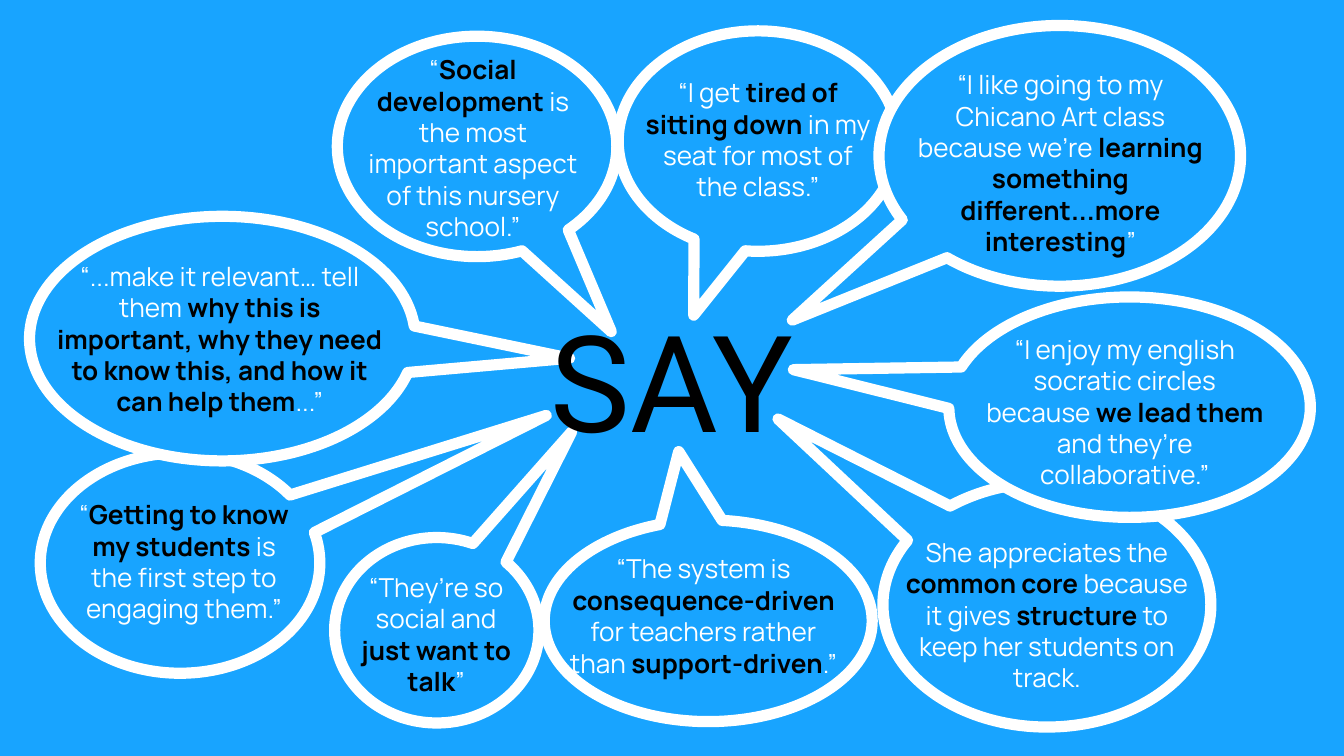
from dataclasses import dataclass

from pptx import Presentation
from pptx import util as u
from pptx.dml.color import RGBColor
from pptx.enum import shapes, text


@dataclass(frozen=True)
class Theme:
    blue: RGBColor = RGBColor(0x18, 0xA4, 0xFF)
    white: RGBColor = RGBColor(0xFF, 0xFF, 0xFF)
    black: RGBColor = RGBColor(0, 0, 0)
    head: str = "Roboto"
    body: str = "Manrope"
    big: int = 72
    small: int = 14
    edge: int = 6
    pad: float = 0.1


class Board:
    def __init__(self, slide, theme):
        self.slide = slide
        self.theme = theme
        fill = slide.background.fill
        fill.solid()
        fill.fore_color.rgb = theme.blue

    def frame(self, shape, anchor):
        frame = shape.text_frame
        frame.word_wrap = True
        frame.auto_size = text.MSO_AUTO_SIZE.NONE
        frame.vertical_anchor = anchor
        pad = u.Inches(self.theme.pad)
        frame.margin_left = frame.margin_right = pad
        frame.margin_top = frame.margin_bottom = pad
        para = frame.paragraphs[0]
        para.alignment = text.PP_ALIGN.CENTER
        return para

    def run(self, para, words, font, size, color, bold=False):
        run = para.add_run()
        run.text = words
        run.font.name = font
        run.font.size = u.Pt(size)
        run.font.bold = bold
        run.font.color.rgb = color

    def title(self, words, box):
        shape = self.slide.shapes.title
        shape.left, shape.top, shape.width, shape.height = map(u.Inches, box)
        para = self.frame(shape, text.MSO_ANCHOR.MIDDLE)
        self.run(para, words, self.theme.head, self.theme.big, self.theme.black)
        self.slide.shapes._spTree.append(shape._element)

    def bubble(self, box, tip):
        kind = shapes.MSO_SHAPE.OVAL_CALLOUT
        shape = self.slide.shapes.add_shape(kind, *map(u.Inches, box))
        shape.shadow.inherit = False
        shape.adjustments[0], shape.adjustments[1] = tip
        shape.fill.solid()
        shape.fill.fore_color.rgb = self.theme.blue
        shape.line.color.rgb = self.theme.white
        shape.line.width = u.Pt(self.theme.edge)

    def quote(self, box, parts, anchor=text.MSO_ANCHOR.TOP):
        shape = self.slide.shapes.add_textbox(*map(u.Inches, box))
        para = self.frame(shape, anchor)
        for i, words in enumerate(parts):
            bold = i % 2 == 1
            color = self.theme.black if bold else self.theme.white
            self.run(para, words, self.theme.body, self.theme.small, color, bold)


BACK = [
    ((2.49, 4, 1.52, 1.38), (0.66, -1.07)),
    ((6.57, 3.59, 2.44, 1.82), (-0.82, -0.76)),
    ((0.3, 3.37, 2.08, 1.64), (1.31, -0.67)),
    ((4.05, 3.87, 2.44, 1.5), (-0.09, -0.84)),
    ((0.22, 1.61, 2.87, 1.82), (0.9, 0.08)),
    ((2.51, 0.27, 2.08, 1.64), (0.48, 0.84)),
]
FRONT = [
    ((7.06, 2.21, 2.69, 1.64), (-0.93, -0.17)),
    ((4.6, 0.23, 2.08, 1.64), (-0.23, 0.79)),
    ((6.54, 0.19, 2.69, 1.94), (-0.74, 0.63)),
]
MID = text.MSO_ANCHOR.MIDDLE
TOP = text.MSO_ANCHOR.TOP
QUOTES = [
    ((0.29, 2, 2.69, 1.04), MID,
     ["“...make it relevant… tell them ",
      "why this is important, why they need to know this, and how it can help them",
      "...”"]),
    ((6.67, 0.41, 2.44, 1.38), TOP,
     ["“I like going to my Chicano Art class because we’re ",
      "learning something different...more interesting", "”"]),
    ((4.69, 0.47, 1.9, 1.04), TOP,
     ["“I get ", "tired of sitting down", " in my seat for most of the class.”"]),
    ((7.2, 2.38, 2.34, 1.13), TOP,
     ["“I enjoy my english socratic circles because ", "we lead them",
      " and they’re collaborative.”"]),
    ((2.57, 0.3, 1.9, 1.04), TOP,
     ["“", "Social development ",
      "is the most important aspect of this nursery school.”"]),
    ((4.12, 3.99, 2.23, 1.18), MID,
     ["“The system is ", "consequence-driven", " for teachers rather than ",
      "support-driven", ".”"]),
    ((0.42, 3.61, 1.9, 1.04), TOP,
     ["“", "Getting to know my students ",
      "is the first step to engaging them.”"]),
    ((6.62, 3.89, 2.34, 1.64), TOP,
     ["She appreciates the ", "common core", " because it gives ", "structure",
      " to keep her students on track."]),
    ((2.57, 4.15, 1.35, 0.95), TOP,
     ["“They’re so social and ", "just want to talk", "”"]),
]


def main():
    deck = Presentation()
    deck.slide_width = u.Inches(10)
    deck.slide_height = deck.slide_width * 9 // 16
    board = Board(deck.slides.add_slide(deck.slide_layouts[5]), Theme())
    for box, tip in BACK:
        board.bubble(box, tip)
    board.title("SAY", (0, 2.38, 10, 0.87))
    for box, tip in FRONT:
        board.bubble(box, tip)
    for box, anchor, parts in QUOTES:
        board.quote(box, parts, anchor)
    deck.save("out.pptx")


if __name__ == "__main__":
    main()
